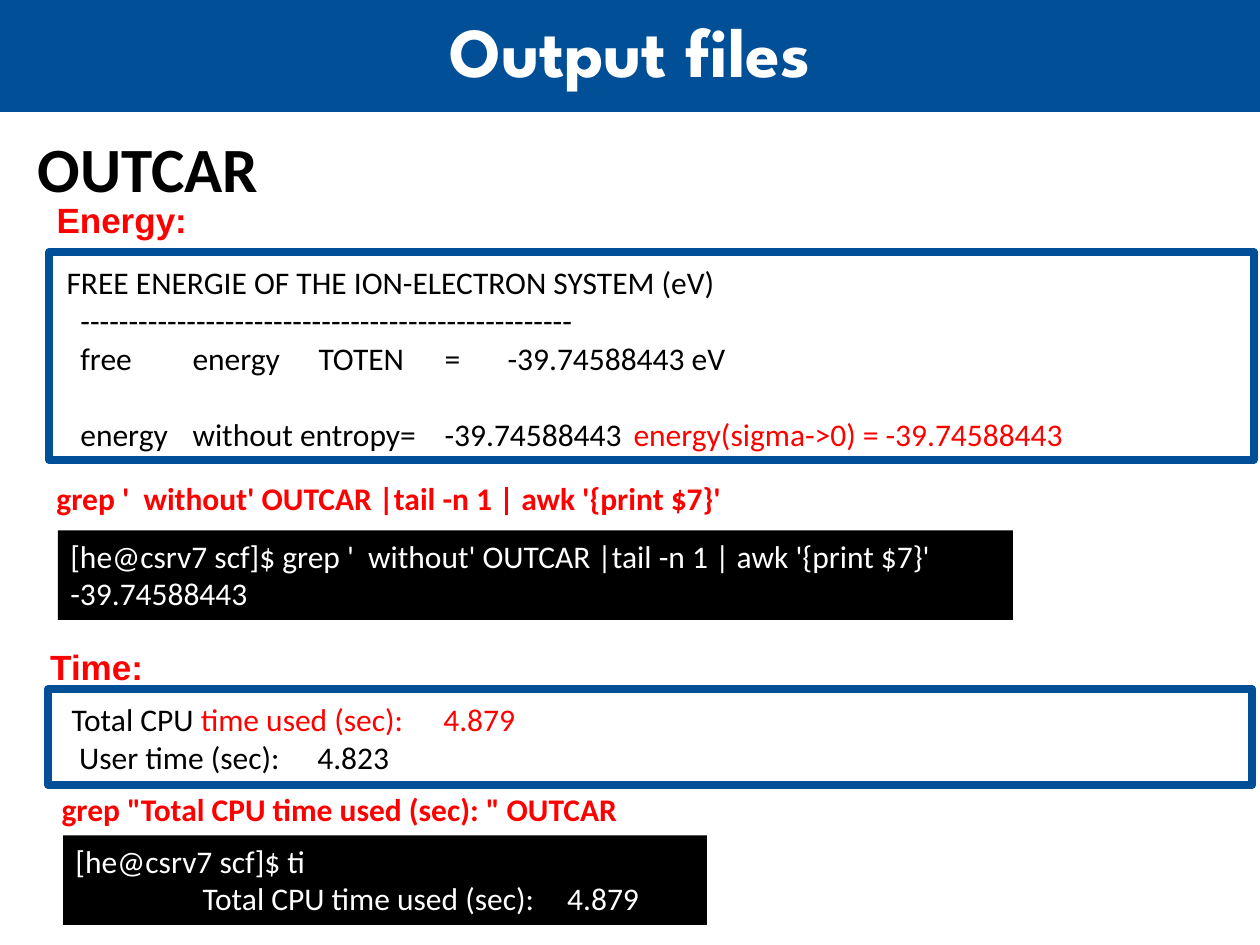
from lxml.etree import SubElement as Sub
from pptx import Presentation
from pptx.dml.color import RGBColor
from pptx.enum.shapes import MSO_SHAPE as Shape
from pptx.enum.text import MSO_ANCHOR as Anchor, PP_ALIGN as Align
from pptx.oxml.ns import qn
from pptx.util import Inches, Pt

BLUE, RED, BLACK, WHITE = "014F97", "FF0000", "000000", "FFFFFF"
GREP = "grep '  without' OUTCAR |tail -n 1 | awk '{print $7}'"

# Line: plain part, red part, indent, tab stops, points before
ENERGY = [
    ("FREE ENERGIE OF THE ION-ELECTRON SYSTEM (eV)", "", 0, [], 0),
    ("-" * 51, "", 0.11, [], 0),
    ("free\tenergy\tTOTEN\t=\t-39.74588443 eV", "", 0.11,
     [0.64, 1.49, 2.3, 2.8], 0),
    ("energy\twithout entropy=\t-39.74588443\t",
     "energy(sigma->0) =\t-39.74588443", 0.11,
     [0.92, 3.03, 4.55, 6.84], 22),
]
TIME = [
    ("Total CPU ", "time used (sec):\t4.879", 0.05, [3.13], 0),
    ("User time (sec):\t4.823", "", 0.11, [2.15], 0),
]
SHELL_A = [
    ("[he@csrv7 scf]$ " + GREP, "", 0, [], 0),
    ("-39.74588443", "", 0, [], 0),
]
SHELL_B = [
    ("[he@csrv7 scf]$ ti", "", 0, [], 0),
    ("Total CPU time used (sec):\t4.879", "", 1.01, [4.09], 0),
]

LABELS = [
    ("OUTCAR", (0.2, 0.98, 5.02, 0.71), 36, "Calibri", BLACK),
    ("Energy:", (0.35, 1.53, 9.62, 0.44), 20, "Arial", RED),
    ("Time:", (0.3, 5.07, 9.62, 0.44), 20, "Arial", RED),
    (GREP, (0.35, 3.75, 5.6, 0.4), 18, "Calibri", RED),
    ('grep "Total CPU time used (sec): " OUTCAR',
     (0.39, 6.22, 5.11, 0.4), 18, "Calibri", RED),
]
FRAMES = [
    (ENERGY, (0.43, 2.04, 9.75, 1.92), (0.39, 2, 9.56, 1.65)),
    (TIME, (0.42, 5.51, 9.75, 0.71), (0.38, 5.47, 9.56, 0.76)),
]
SHELLS = [
    (SHELL_B, (0.5, 6.63, 5.11, 0.71)),
    (SHELL_A, (0.46, 4.21, 7.58, 0.71)),
]

deck = Presentation()
deck.slide_width, deck.slide_height = Inches(10), Inches(7.5)
slide = deck.slides.add_slide(deck.slide_layouts[6])


def color(code):
    return RGBColor.from_string(code)


def style(run, size, face, code, bold=False):
    font = run.font
    font.size, font.name, font.bold = Pt(size), face, bold
    font.color.rgb = color(code)


def text_box(place):
    box = slide.shapes.add_textbox(*map(Inches, place))
    box.text_frame.word_wrap = True
    return box


def block(place, fill=None, line=None, width=0):
    box = slide.shapes.add_shape(Shape.RECTANGLE, *map(Inches, place))
    box.shadow.inherit = False
    if fill:
        box.fill.solid()
        box.fill.fore_color.rgb = color(fill)
    else:
        box.fill.background()
    if line:
        box.line.color.rgb = color(line)
        box.line.width = Pt(width)
    else:
        box.line.fill.background()
    return box


def write(box, lines, code):
    frame = box.text_frame
    frame.text = "\n".join(line[0] for line in lines)
    for para, (_, extra, indent, stops, before) in zip(frame.paragraphs, lines):
        para.alignment = Align.LEFT
        para.space_before = Pt(before)
        style(para.runs[0], 18, "Calibri", code)
        if extra:
            run = para.add_run()
            run.text = extra
            style(run, 18, "Calibri", RED)
        props = para._p.get_or_add_pPr()
        props.set("marL", "0")
        props.set("indent", str(Inches(indent)))
        if stops:
            tabs = Sub(props, qn("a:tabLst"))
            for stop in stops:
                Sub(tabs, qn("a:tab"), pos=str(Inches(stop)), algn="l")


banner = block((0, 0, 10, 0.87), BLUE, BLUE, 3)
banner.text_frame.text = "Output files"
banner.text_frame.vertical_anchor = Anchor.MIDDLE
title = banner.text_frame.paragraphs[0]
title.alignment = Align.CENTER
title.line_spacing = 0.9
style(title.runs[0], 40, "League Spartan", WHITE, True)

for lines, place, edge in FRAMES:
    write(text_box(place), lines, BLACK)
    block(edge, line=BLUE, width=4.5)

for text, place, size, face, code in LABELS:
    box = text_box(place)
    box.text_frame.text = text
    style(box.text_frame.paragraphs[0].runs[0], size, face, code, True)

for lines, place in SHELLS:
    shell = block(place, BLACK)
    shell.text_frame.vertical_anchor = Anchor.TOP
    write(shell, lines, WHITE)

deck.save("out.pptx")
